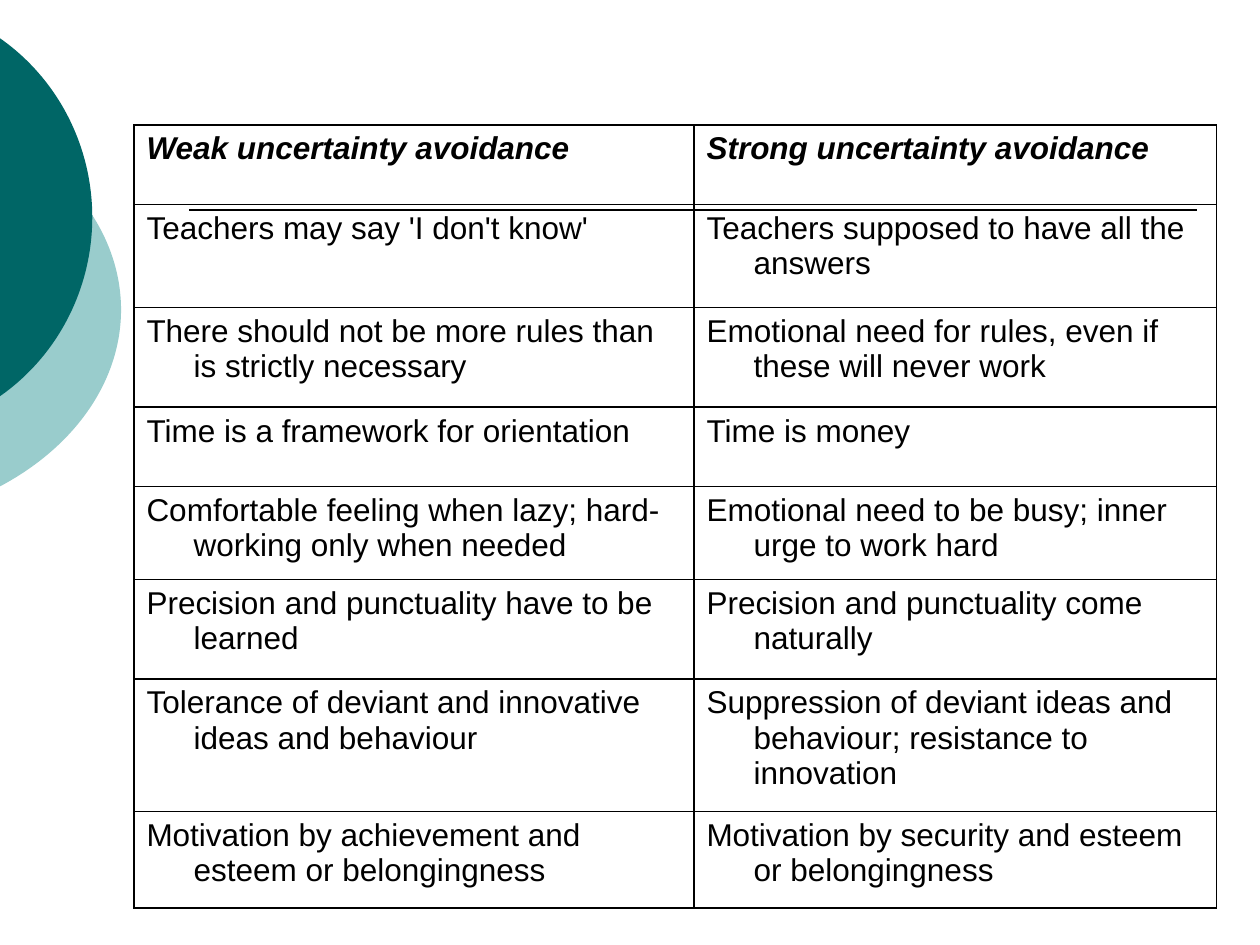
"""Build the uncertainty avoidance comparison slide."""
from dataclasses import dataclass

from lxml import etree
from pptx import Presentation
from pptx.dml.color import RGBColor
from pptx.enum import shapes
from pptx.oxml import ns
from pptx.util import Cm, Pt


@dataclass(frozen=True)
class Theme:
    font: str = "Arial"
    size: int = 18
    ink: str = "000000"
    dark: str = "006666"
    light: str = "99CCCC"
    line: float = 1


THEME = Theme()
ROWS = [
    ("Weak uncertainty avoidance", "Strong uncertainty avoidance", 1.6),
    ("Teachers may say 'I don't know'", "Teachers supposed to have all the answers", 2.08),
    ("There should not be more rules than is strictly necessary",
     "Emotional need for rules, even if these will never work", 2.01),
    ("Time is a framework for orientation", "Time is money", 1.6),
    ("Comfortable feeling when lazy; hard-working only when needed",
     "Emotional need to be busy; inner urge to work hard", 1.87),
    ("Precision and punctuality have to be learned",
     "Precision and punctuality come naturally", 2.01),
    ("Tolerance of deviant and innovative ideas and behaviour",
     "Suppression of deviant ideas and behaviour; resistance to innovation", 2.67),
    ("Motivation by achievement and esteem or belongingness",
     "Motivation by security and esteem or belongingness", 1.95),
]
COLUMNS = (11.29, 10.53)
TABLE_AT = (2.7, 2.52)
INDENT = 0.95
RULE = (3.81, 24.13, 4.24)
OVALS = [
    (THEME.light, (-8.99, 1.9, 11.43, 8.69)),
    (THEME.dark, (-6.73, 0, 8.59, 8.76)),
]


def add_oval(s, color, box):
    sp = s.shapes.add_shape(shapes.MSO_SHAPE.OVAL, *map(Cm, box))
    sp.shadow.inherit = False
    sp.fill.solid()
    sp.fill.fore_color.rgb = RGBColor.from_string(color)
    sp.line.fill.background()


def add_rule(s, left, right, y):
    cx = s.shapes.add_connector(shapes.MSO_CONNECTOR.STRAIGHT, Cm(left), Cm(y), Cm(right), Cm(y))
    cx.line.color.rgb = RGBColor.from_string(THEME.ink)
    cx.line.width = Pt(THEME.line)
    etree.SubElement(cx.element.spPr, ns.qn("a:effectLst"))


def add_borders(cell):
    pr = cell._tc.get_or_add_tcPr()
    for i, side in enumerate(("lnL", "lnR", "lnT", "lnB")):
        ln = etree.Element(ns.qn("a:" + side), w=str(Pt(THEME.line)))
        fill = etree.SubElement(ln, ns.qn("a:solidFill"))
        etree.SubElement(fill, ns.qn("a:srgbClr"), val=THEME.ink)
        pr.insert(i, ln)


def fill_cell(cell, content, header):
    cell.fill.background()
    add_borders(cell)
    p = cell.text_frame.paragraphs[0]
    ppr = p._p.get_or_add_pPr()
    ppr.set("marL", str(Cm(INDENT)))
    ppr.set("indent", str(-Cm(INDENT)))
    r = p.add_run()
    r.text = content
    r.font.name = THEME.font
    r.font.size = Pt(THEME.size)
    r.font.bold = r.font.italic = header
    r.font.color.rgb = RGBColor.from_string(THEME.ink)


def add_comparison(s):
    left, top = TABLE_AT
    height = sum(row[-1] for row in ROWS)
    table = s.shapes.add_table(len(ROWS), len(COLUMNS), Cm(left), Cm(top),
                               Cm(sum(COLUMNS)), Cm(height)).table
    table.first_row = table.horz_banding = False
    for column, width in zip(table.columns, COLUMNS):
        column.width = Cm(width)
    for i, (*contents, row_height) in enumerate(ROWS):
        table.rows[i].height = Cm(row_height)
        for j, content in enumerate(contents):
            fill_cell(table.cell(i, j), content, header=i == 0)


def main():
    prs = Presentation()
    prs.slide_width, prs.slide_height = Cm(25.4), Cm(19.05)
    s = prs.slides.add_slide(prs.slide_layouts[6])
    for color, box in OVALS:
        add_oval(s, color, box)
    add_rule(s, *RULE)
    add_comparison(s)
    prs.save("out.pptx")


if __name__ == "__main__":
    main()
